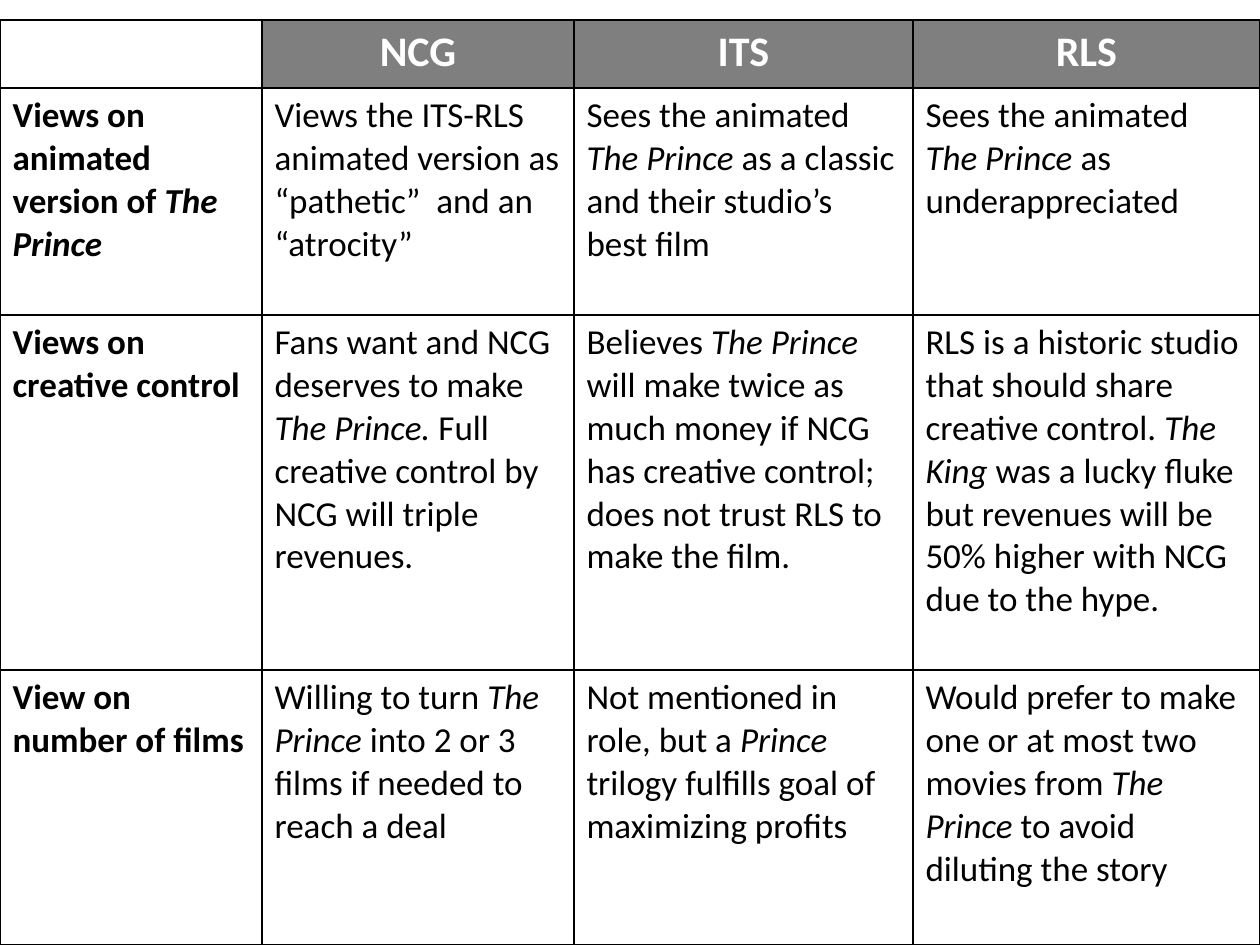
from lxml import etree
from pptx import Presentation, util as u
from pptx.dml.color import RGBColor
from pptx.enum import text
from pptx.oxml import parse_xml
from pptx.oxml.ns import nsdecls, qn

BLACK = RGBColor(0, 0, 0)
WHITE = RGBColor(255, 255, 255)
FONT = "Calibri"


def px(n):
    return u.Inches(n / 126)


def add_borders(cell):
    for side in ("lnL", "lnR", "lnT", "lnB"):
        cell._tc.get_or_add_tcPr().append(parse_xml(
            f'<a:{side} {nsdecls("a")} w="12700"><a:solidFill>'
            f'<a:srgbClr val="{BLACK}"/></a:solidFill></a:{side}>'))


# Asterisks enclose italic words
ROWS = [
    ["", "NCG", "ITS", "RLS"],
    ["Views on animated version of *The Prince*",
     "Views the ITS-RLS animated version as “pathetic”  and an “atrocity”",
     "Sees the animated *The Prince *as a classic and their studio’s best film",
     "Sees the animated* The Prince* as underappreciated"],
    ["Views on creative control",
     "Fans want and NCG deserves to make *The Prince. *Full creative control "
     "by NCG will triple revenues.",
     "Believes *The Prince *will make twice as much money if NCG has creative "
     "control; does not trust RLS to make the film.",
     "RLS is a historic studio that should share creative control. *The King* "
     "was a lucky fluke but revenues will be 50% higher with NCG due to the hype."],
    ["View on number of films",
     "Willing to turn *The Prince* into 2 or 3 films if needed to reach a deal",
     "Not mentioned in role, but a *Prince* trilogy fulfills goal of "
     "maximizing profits",
     "Would prefer to make one or at most two movies from *The Prince* to "
     "avoid diluting the story"],
]
COLUMN_WIDTHS = [262, 312, 339, 347]
ROW_HEIGHTS = [68, 227, 355, 275]

deck = Presentation()
deck.slide_width, deck.slide_height = px(1260), px(945)
page = deck.slides.add_slide(deck.slide_layouts[6])

# Table grid
table = page.shapes.add_table(
    len(ROWS), len(COLUMN_WIDTHS), 0, px(20),
    px(sum(COLUMN_WIDTHS)), px(sum(ROW_HEIGHTS))).table
table.first_row = table.horz_banding = False
for column, width in zip(table.columns, COLUMN_WIDTHS):
    column.width = px(width)
for row, height in zip(table.rows, ROW_HEIGHTS):
    row.height = px(height)

# Cells
for r, row in enumerate(ROWS):
    for c, wording in enumerate(row):
        cell = table.cell(r, c)
        is_header = r == 0 and c > 0
        add_borders(cell)

        # Header cells are half-transparent black
        if is_header:
            cell.fill.solid()
            cell.fill.fore_color.rgb = BLACK
            color = cell._tc.tcPr.find(qn("a:solidFill")).find(qn("a:srgbClr"))
            etree.SubElement(color, qn("a:alpha"), val="50000")
        else:
            cell.fill.background()

        # Text
        para = cell.text_frame.paragraphs[0]
        if is_header:
            para.alignment = text.PP_ALIGN.CENTER
        for i, part in enumerate(wording.split("*")):
            if not part:
                continue
            span = para.add_run()
            span.text = part
            span.font.name = FONT
            span.font.size = u.Pt(24 if is_header else 20)
            span.font.bold = is_header or c == 0
            span.font.italic = i % 2 == 1
            span.font.color.rgb = WHITE if is_header else BLACK

deck.save("out.pptx")
